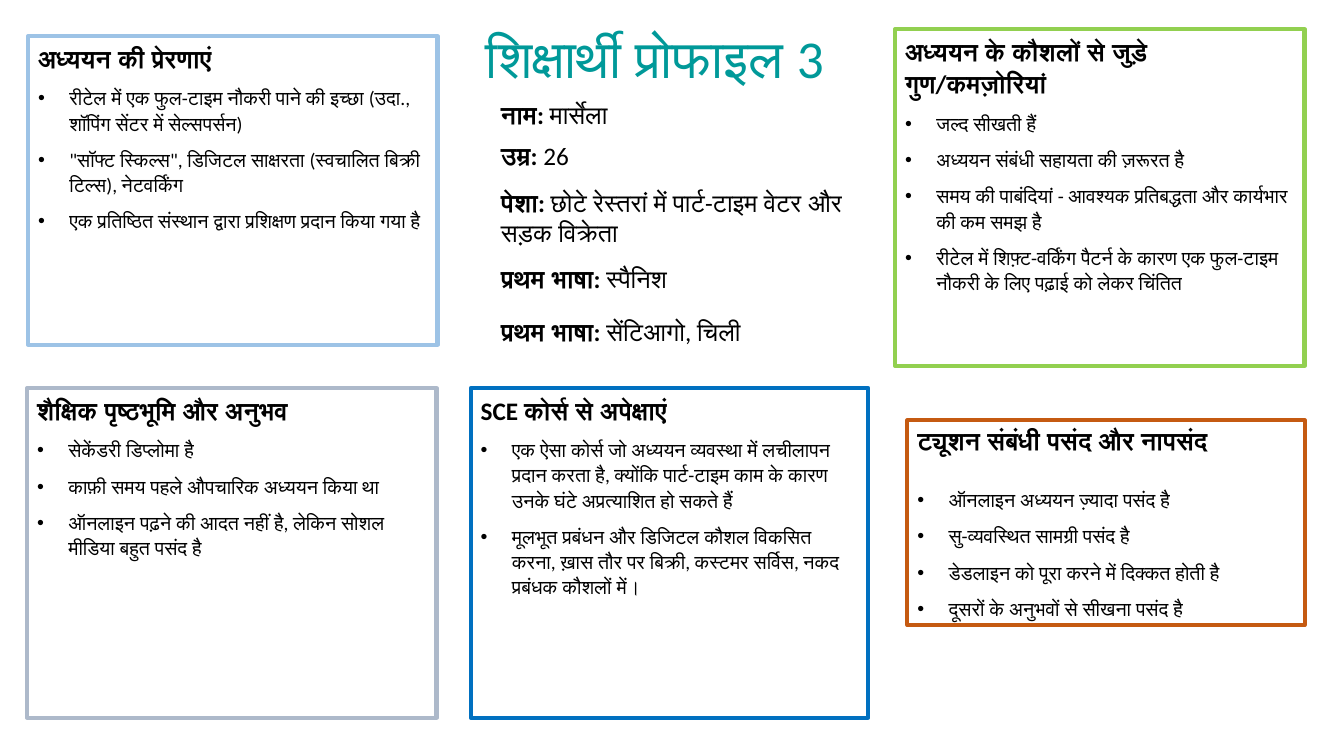
from pptx import Presentation
from pptx.dml.color import RGBColor
from pptx.enum.shapes import MSO_SHAPE
from pptx.enum.text import MSO_ANCHOR, MSO_AUTO_SIZE, PP_ALIGN
from pptx.oxml.ns import qn
from pptx.util import Inches, Pt
from lxml import etree

RECT = MSO_SHAPE.RECTANGLE
TOP = MSO_ANCHOR.TOP
NO_FIT = MSO_AUTO_SIZE.NONE
LEFT = PP_ALIGN.LEFT

FONT = "Calibri"
COLORS = {
    "title": "009999",
    "text": "000000",
    "paper": "FFFFFF",
    "motives": "9DC3E6",
    "skills": "92D050",
    "background": "ADB9CA",
    "expectations": "0070C0",
    "tuition": "C55A11",
}

PANELS = [
    ("expectations", (4.67, 3.85, 3.94, 3.27), "SCE कोर्स से अपेक्षाएं", [
        "एक ऐसा कोर्स जो अध्ययन व्यवस्था में लचीलापन प्रदान करता है, क्योंकि पार्ट-टाइम काम के कारण उनके घंटे अप्रत्याशित हो सकते हैं",
        "मूलभूत प्रबंधन और डिजिटल कौशल विकसित करना, ख़ास तौर पर बिक्री, कस्टमर सर्विस, नकद प्रबंधक कौशलों में।",
    ]),
    ("motives", (0.28, 0.36, 4.06, 3.06), "अध्ययन की प्रेरणाएं", [
        "रीटेल में एक फुल-टाइम नौकरी पाने की इच्छा (उदा., शॉपिंग सेंटर में सेल्सपर्सन)",
        "\"सॉफ्ट स्किल्स\", डिजिटल साक्षरता (स्वचालित बिक्री टिल्स), नेटवर्किंग",
        "एक प्रतिष्ठित संस्थान द्वारा प्रशिक्षण प्रदान किया गया है",
    ]),
    ("skills", (8.88, 0.29, 4.06, 3.34), "अध्ययन के कौशलों से जुड़े गुण/कमज़ोरियां", [
        "जल्द सीखती हैं",
        "अध्ययन संबंधी सहायता की ज़रूरत है",
        "समय की पाबंदियां - आवश्यक प्रतिबद्धता और कार्यभार की कम समझ है",
        "रीटेल में शिफ़्ट-वर्किंग पैटर्न के कारण एक फुल-टाइम नौकरी के लिए पढ़ाई को लेकर चिंतित",
    ]),
    ("background", (0.27, 3.85, 4.06, 3.27), "शैक्षिक पृष्ठभूमि और अनुभव", [
        "सेकेंडरी डिप्लोमा है",
        "काफ़ी समय पहले औपचारिक अध्ययन किया था",
        "ऑनलाइन पढ़ने की आदत नहीं है, लेकिन सोशल मीडिया बहुत पसंद है",
    ]),
]
TUITION = ("tuition", (9, 4.17, 3.94, 2.03), "ट्यूशन संबंधी पसंद और नापसंद", [
    "ऑनलाइन अध्ययन ज़्यादा पसंद है",
    "सु-व्यवस्थित सामग्री पसंद है",
    "डेडलाइन को पूरा करने में दिक्कत होती है",
    "दूसरों के अनुभवों से सीखना पसंद है",
])
PROFILE = [
    (0, 0.4, "नाम:", "मार्सेला"),
    (0.4, 0.4, "उम्र:", "26"),
    (0.87, 0.71, "पेशा:", "छोटे रेस्तरां में पार्ट-टाइम वेटर और सड़क विक्रेता"),
    (1.62, 0.4, "प्रथम भाषा:", "स्पैनिश"),
    (2.15, 0.4, "प्रथम भाषा:", "सेंटिआगो, चिली"),
]


def rgb(name):
    return RGBColor.from_string(COLORS[name])


def style(p, size, color="text", bold=None):
    p.alignment = LEFT
    p.font.name = FONT
    p.font.size = Pt(size)
    p.font.bold = bold
    p.font.color.rgb = rgb(color)


def add_bullet(p):
    pPr = p._p.get_or_add_pPr()
    pPr.set("marL", str(Inches(0.31)))
    pPr.set("indent", str(Inches(-0.31)))
    bullet_font = etree.Element(qn("a:buFont"), typeface="Arial")
    bullet = etree.Element(qn("a:buChar"), char="•")
    defaults = pPr.find(qn("a:defRPr"))
    defaults.addprevious(bullet_font)
    defaults.addprevious(bullet)


def add_title(slide, box, text):
    sp = slide.shapes.title
    sp.left, sp.top, sp.width, sp.height = map(Inches, box)
    tf = sp.text_frame
    tf.text = text
    tf.word_wrap = False
    tf.auto_size = NO_FIT
    tf.vertical_anchor = TOP
    p = tf.paragraphs[0]
    style(p, 38, "title")
    p.line_spacing = 0.9


def add_panel(slide, name, box, heading, items, fill="paper", spacing=1.07, gap=8):
    sp = slide.shapes.add_shape(RECT, *map(Inches, box))
    sp.shadow.inherit = False
    if fill:
        sp.fill.solid()
        sp.fill.fore_color.rgb = rgb(fill)
    else:
        sp.fill.background()
    sp.line.color.rgb = rgb(name)
    sp.line.width = Pt(3)
    tf = sp.text_frame
    tf.word_wrap = True
    tf.vertical_anchor = TOP
    p = tf.paragraphs[0]
    p.text = heading
    style(p, 18, bold=True)
    p.line_spacing = spacing
    p.space_after = Pt(gap)
    for item in items:
        p = tf.add_paragraph()
        p.text = item
        style(p, 14)
        p.line_spacing = 1.07
        p.space_after = Pt(8)
        add_bullet(p)


def add_profile(slide, left, top, width):
    for offset, height, label, value in PROFILE:
        sp = slide.shapes.add_textbox(
            Inches(left), Inches(top + offset), Inches(width), Inches(height))
        tf = sp.text_frame
        tf.word_wrap = True
        p = tf.paragraphs[0]
        style(p, 18)
        r = p.add_run()
        r.text = label
        r.font.bold = True
        p.add_run().text = " " + value


def main():
    prs = Presentation()
    prs.slide_width = Inches(13.33)
    prs.slide_height = Inches(7.5)
    slide = prs.slides.add_slide(prs.slide_layouts[5])
    add_title(slide, (4.72, 0.27, 3.79, 0.68), "शिक्षार्थी प्रोफाइल 3")
    for panel in PANELS:
        add_panel(slide, *panel)
    add_profile(slide, 4.87, 0.94, 3.75)
    add_panel(slide, *TUITION, fill=None, spacing=1.0, gap=22)
    prs.save("out.pptx")


if __name__ == "__main__":
    main()
